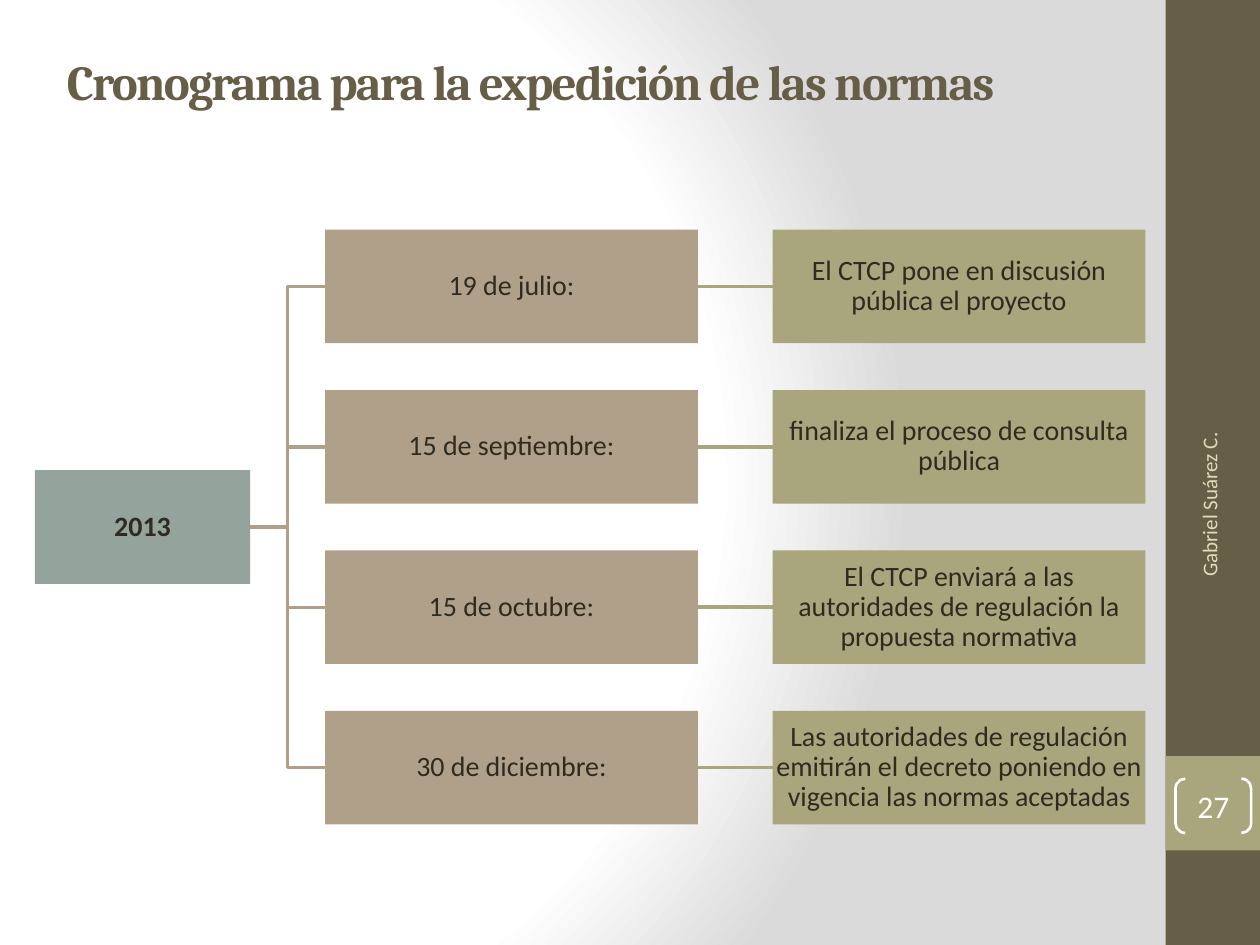
"""Builds the 2013 timetable slide as a left-to-right hierarchy."""
from lxml import etree
from pptx import Presentation
from pptx.dml.color import RGBColor
from pptx.enum import shapes, text
from pptx.oxml import parse_xml
from pptx.oxml.ns import nsdecls, qn
from pptx.util import Pt

BROWN = RGBColor(0x67, 0x5E, 0x47)
OLIVE = RGBColor(0xA9, 0xA5, 0x7C)
TAN = RGBColor(0xB1, 0xA0, 0x89)
SAGE = RGBColor(0x95, 0xA3, 0x9D)
INK = RGBColor(0x2F, 0x2B, 0x20)
CREAM = RGBColor(0xDF, 0xDC, 0xB7)
WHITE = RGBColor(0xFF, 0xFF, 0xFF)
GREY = RGBColor(0xDA, 0xDA, 0xDA)

STEPS = [
    ("19 de julio:", "El CTCP pone en discusión pública el proyecto"),
    ("15 de septiembre:", "finaliza el proceso de consulta pública"),
    ("15 de octubre:", "El CTCP enviará a las autoridades de regulación la propuesta normativa"),
    ("30 de diciembre:", "Las autoridades de regulación emitirán el decreto poniendo en vigencia "
                         "las normas aceptadas"),
]
ROOT_LEFT, ROOT_WIDTH = 20, 122.9
DATE_LEFT, EVENT_LEFT, STEP_WIDTH = 185.75, 441.5, 213.1
FIRST_CENTRE, ROW_PITCH, BOX_HEIGHT = 163.7, 91.65, 64.9


class SlideBuilder:
    def __init__(self, page, font="Calibri", title_font="Cambria"):
        self.page, self.font, self.title_font = page, font, title_font

    def background(self, stops):
        self.page.background.fill.solid()
        solid = self.page._element.find(".//" + qn("a:solidFill"))
        marks = "".join(f'<a:gs pos="{place * 1000}"><a:srgbClr val="{color}"/></a:gs>'
                        for place, color in stops)
        solid.getparent().replace(solid, parse_xml(
            f'<a:gradFill rotWithShape="1" {nsdecls("a")}><a:gsLst>{marks}</a:gsLst>'
            '<a:path path="circle"><a:fillToRect l="20000" t="50000" r="100000" b="50000"/>'
            '</a:path></a:gradFill>'))

    def add_words(self, box, words, size, color, align, bold=False, font=None, inset=None):
        frame = box.text_frame
        frame.word_wrap = True
        frame.vertical_anchor = text.MSO_ANCHOR.MIDDLE
        if inset is not None:
            frame.margin_left = frame.margin_right = Pt(inset)
            frame.margin_top = frame.margin_bottom = Pt(inset)
        para = frame.paragraphs[0]
        para.alignment = align
        span = para.add_run()
        span.text = words
        span.font.name, span.font.size = font or self.font, Pt(size)
        span.font.bold, span.font.color.rgb = bold, color
        return para

    def title(self, words, *place):
        box = self.page.shapes.title
        box.left, box.top, box.width, box.height = map(Pt, place)
        para = self.add_words(box, words, 28, BROWN, text.PP_ALIGN.LEFT, True, self.title_font)
        para.runs[0].font._element.set("spc", "-100")

    def block(self, color, *place):
        box = self.page.shapes.add_shape(shapes.MSO_SHAPE.RECTANGLE, *map(Pt, place))
        box.shadow.inherit = False
        box.fill.solid()
        box.fill.fore_color.rgb = color
        box.line.fill.background()
        return box

    def node(self, words, color, left, centre, width, bold=False):
        box = self.block(color, left, centre - BOX_HEIGHT / 2, width, BOX_HEIGHT)
        para = self.add_words(box, words, 16, INK, text.PP_ALIGN.CENTER, bold, inset=0.8)
        para.line_spacing = 0.9

    def link(self, color, left, right, centre):
        line = self.page.shapes.add_connector(
            shapes.MSO_CONNECTOR.STRAIGHT, *map(Pt, (left, centre, right, centre)))
        line.line.color.rgb, line.line.width = color, Pt(2)
        etree.SubElement(line._element.spPr, qn("a:effectLst"))

    def elbow(self, color, left, start, right, end):
        middle = (left + right) / 2
        points = [(Pt(x), Pt(y)) for x, y in ((middle, start), (middle, end), (right, end))]
        outline = self.page.shapes.build_freeform(Pt(left), Pt(start))
        outline.add_line_segments(points, close=False)
        line = outline.convert_to_shape()
        line.shadow.inherit = False
        line.fill.background()
        line.line.color.rgb, line.line.width = color, Pt(2)

    def side_label(self, words, *place):
        box = self.page.shapes.add_textbox(*map(Pt, place))
        box.rotation = 270
        self.add_words(box, words, 12, CREAM, text.PP_ALIGN.RIGHT)

    def page_number(self, words, *place):
        box = self.page.shapes.add_shape(shapes.MSO_SHAPE.DOUBLE_BRACKET, *map(Pt, place))
        box.shadow.inherit = False
        box.adjustments[0] = 0.18
        box.fill.background()
        box.line.color.rgb, box.line.width = WHITE, Pt(1.5)
        self.add_words(box, words, 18, WHITE, text.PP_ALIGN.CENTER, inset=0)


def main():
    deck = Presentation()
    deck.slide_width, deck.slide_height = Pt(720), Pt(540)
    builder = SlideBuilder(deck.slides.add_slide(deck.slide_layouts[5]))
    builder.background([(0, WHITE), (75, WHITE), (100, GREY)])
    builder.block(BROWN, 666, 0, 54, 540)
    builder.block(OLIVE, 666, 432, 54, 54)
    builder.title("Cronograma para la expedición de las normas", 31, 9.4, 600, 73.4)
    builder.side_label("Gabriel Suárez C.", 597.6, 319, 186.5, 28.8)
    builder.page_number("27", 671.75, 445, 43.2, 31)

    centres = [FIRST_CENTRE + row * ROW_PITCH for row in range(len(STEPS))]
    root_centre = (centres[0] + centres[-1]) / 2
    for centre in centres:
        builder.link(OLIVE, DATE_LEFT + STEP_WIDTH, EVENT_LEFT, centre)
        builder.elbow(TAN, ROOT_LEFT + ROOT_WIDTH, root_centre, DATE_LEFT, centre)
    builder.node("2013", SAGE, ROOT_LEFT, root_centre, ROOT_WIDTH, bold=True)
    for centre, (date, event) in zip(centres, STEPS):
        builder.node(date, TAN, DATE_LEFT, centre, STEP_WIDTH)
        builder.node(event, OLIVE, EVENT_LEFT, centre, STEP_WIDTH)
    deck.save("out.pptx")


if __name__ == "__main__":
    main()
